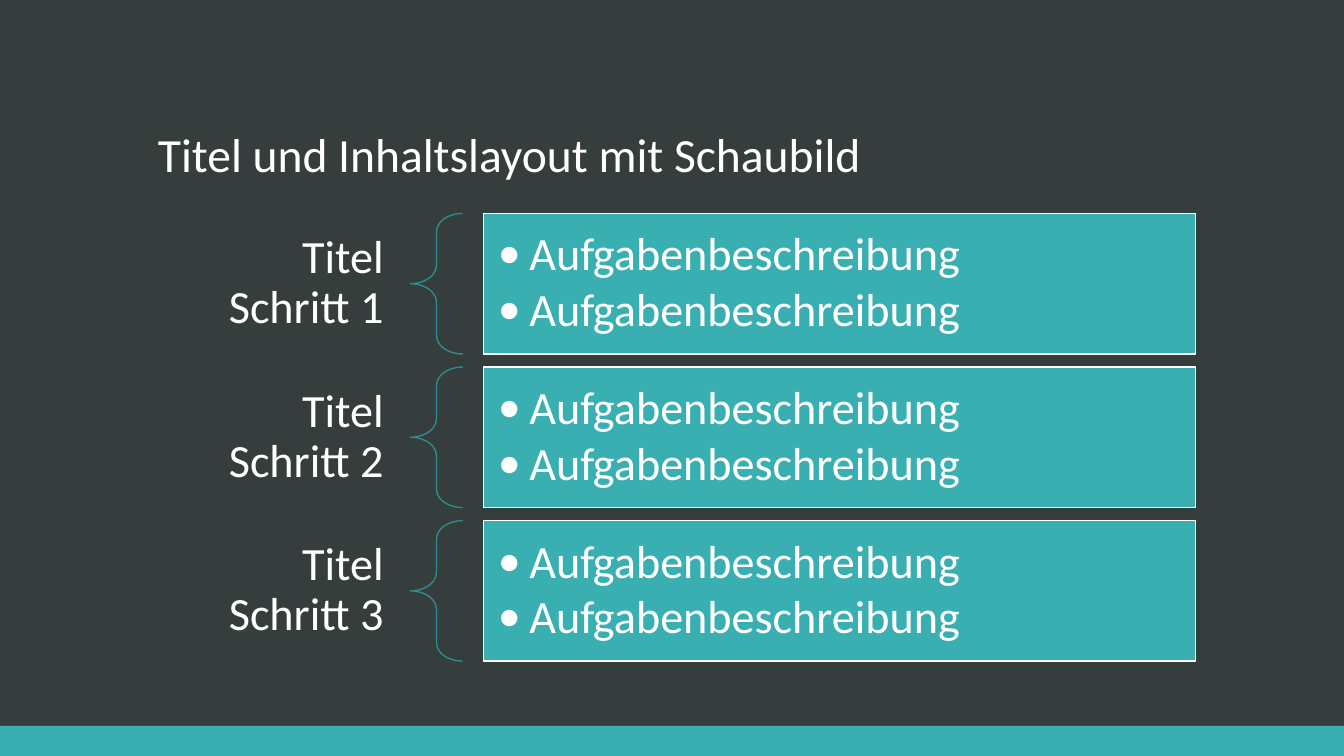
from dataclasses import dataclass

from lxml import etree
from pptx import Presentation
from pptx.dml.color import RGBColor
from pptx.enum.shapes import MSO_SHAPE
from pptx.enum.text import MSO_ANCHOR, MSO_AUTO_SIZE, PP_ALIGN
from pptx.oxml.ns import qn
from pptx.util import Cm, Pt

RECTANGLE, LEFT_BRACE = MSO_SHAPE.RECTANGLE, MSO_SHAPE.LEFT_BRACE
LEFT, RIGHT = PP_ALIGN.LEFT, PP_ALIGN.RIGHT
MIDDLE, BOTTOM = MSO_ANCHOR.MIDDLE, MSO_ANCHOR.BOTTOM
NO_FIT = MSO_AUTO_SIZE.NONE


@dataclass(frozen=True)
class Theme:
    background: RGBColor = RGBColor.from_string("363D3D")
    accent: RGBColor = RGBColor.from_string("3AAFB2")
    brace: RGBColor = RGBColor.from_string("2E8C8F")
    text: RGBColor = RGBColor.from_string("FFFFFF")
    font: str = "Calibri"
    title_size: Pt = Pt(34)
    step_size: Pt = Pt(33)
    line_width: Pt = Pt(1)


THEME = Theme()
STEPS = [(f"Titel Schritt {number}", ["Aufgabenbeschreibung"] * 2)
         for number in (1, 2, 3)]


def set_frame(frame, anchor, side, vertical):
    frame.word_wrap = True
    frame.auto_size = NO_FIT
    frame.vertical_anchor = anchor
    frame.margin_left = frame.margin_right = Cm(side)
    frame.margin_top = frame.margin_bottom = Cm(vertical)


def style_paragraph(paragraph, size, align):
    paragraph.alignment = align
    paragraph.line_spacing = 0.9
    paragraph.font.name = THEME.font
    paragraph.font.size = size
    paragraph.font.color.rgb = THEME.text


# Slide and background
deck = Presentation()
deck.slide_width, deck.slide_height = Cm(33.87), Cm(19.05)
slide = deck.slides.add_slide(deck.slide_layouts[5])
slide.background.fill.solid()
slide.background.fill.fore_color.rgb = THEME.background

# Bottom band
band = slide.shapes.add_shape(RECTANGLE, 0, Cm(18.29), deck.slide_width, Cm(0.76))
band.shadow.inherit = False
band.fill.solid()
band.fill.fore_color.rgb = THEME.accent
band.line.fill.background()

# Title
title = slide.shapes.title
title.left, title.top, title.width, title.height = Cm(3.73), Cm(1.3), Cm(26.42), Cm(3.43)
title.text_frame.text = "Titel und Inhaltslayout mit Schaubild"
set_frame(title.text_frame, BOTTOM, 0.25, 0.13)
style_paragraph(title.text_frame.paragraphs[0], THEME.title_size, LEFT)

# Steps: label, brace and task box in each row
first_top, row_pitch, row_height, label_height = 5.38, 3.87, 3.54, 3.07
for row, (step, tasks) in enumerate(STEPS):
    top = first_top + row * row_pitch

    label = slide.shapes.add_textbox(
        Cm(3.73), Cm(top + (row_height - label_height) / 2), Cm(6.6), Cm(label_height))
    label.text_frame.text = step
    set_frame(label.text_frame, MIDDLE, 0.66, 0.23)
    style_paragraph(label.text_frame.paragraphs[0], THEME.step_size, RIGHT)

    brace = slide.shapes.add_shape(LEFT_BRACE, Cm(10.34), Cm(top), Cm(1.32), Cm(row_height))
    brace.shadow.inherit = False
    brace.adjustments[0], brace.adjustments[1] = 0.35, 0.5
    brace.fill.background()
    brace.line.color.rgb = THEME.brace
    brace.line.width = THEME.line_width

    task_box = slide.shapes.add_shape(RECTANGLE, Cm(12.19), Cm(top), Cm(17.94), Cm(row_height))
    task_box.shadow.inherit = False
    task_box.fill.solid()
    task_box.fill.fore_color.rgb = THEME.accent
    task_box.line.color.rgb = THEME.text
    task_box.line.width = THEME.line_width
    task_box.text_frame.text = "\n".join(tasks)
    set_frame(task_box.text_frame, MIDDLE, 0.36, 0.36)
    for task in task_box.text_frame.paragraphs:
        style_paragraph(task, THEME.step_size, LEFT)
        task.space_after = Pt(4)
        # Bullet with hanging indent
        properties = task._p.get_or_add_pPr()
        properties.set("marL", str(Cm(0.79)))
        properties.set("indent", str(-Cm(0.79)))
        text_defaults = properties.find(qn("a:defRPr"))
        text_defaults.addprevious(etree.Element(qn("a:buFont"), typeface=THEME.font))
        text_defaults.addprevious(etree.Element(qn("a:buChar"), char="•"))

deck.save("out.pptx")
